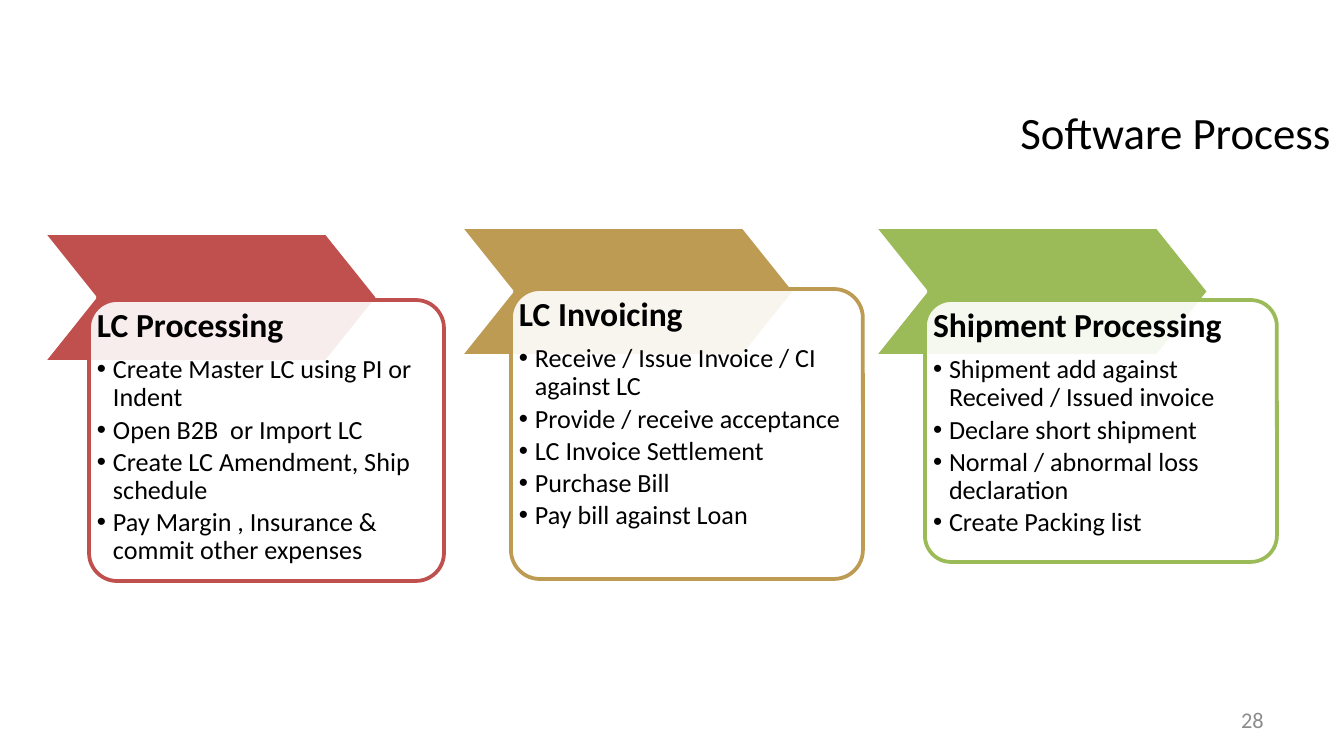
from lxml.etree import SubElement
from pptx import Presentation
from pptx.dml.color import RGBColor
from pptx.enum.shapes import MSO_SHAPE as Shape
from pptx.enum.text import MSO_ANCHOR as Anchor, MSO_AUTO_SIZE as AutoSize, PP_ALIGN as Align
from pptx.oxml.ns import qn
from pptx.util import Pt

PX = 914400 / 134.4
FONT = "Calibri"
COLORS = {
    "text": "000000",
    "number": "8C8C8C",
    "paper": "FFFFFF",
    "red": "C0504D",
    "gold": "BD9B53",
    "green": "9BBB59",
}
CHEVRON_SIZE = (335, 129)
CARD_INSET = 8
BULLET_INDENT = 16

STAGES = [
    ("red", (43, 233), (89, 300, 355, 281), "LC Processing", [
        "Create Master LC using PI or Indent",
        "Open B2B  or Import LC",
        "Create LC Amendment, Ship schedule",
        "Pay Margin , Insurance & commit other expenses",
    ]),
    ("gold", (460, 227), (511, 289, 352, 290), "LC Invoicing", [
        "Receive / Issue Invoice / CI against LC",
        "Provide / receive acceptance",
        "LC Invoice Settlement",
        "Purchase Bill",
        "Pay bill against Loan",
    ]),
    ("green", (874, 227), (925, 300, 352, 262), "Shipment Processing", [
        "Shipment add against Received / Issued invoice",
        "Declare short shipment",
        "Normal / abnormal loss declaration",
        "Create Packing list",
    ]),
]


def emu(pixels):
    return round(pixels * PX)


def color(name):
    return RGBColor.from_string(COLORS[name])


def place(shape, box):
    shape.left, shape.top, shape.width, shape.height = map(emu, box)


def style_runs(paragraph, size, color_name="text", bold=False):
    for run in paragraph.runs:
        run.font.name = FONT
        run.font.size = Pt(size)
        run.font.bold = bold
        run.font.color.rgb = color(color_name)


def fill_line(shape, box, text, size, color_name="text"):
    place(shape, box)
    frame = shape.text_frame
    frame.text = text
    frame.word_wrap = True
    frame.auto_size = AutoSize.NONE
    frame.vertical_anchor = Anchor.MIDDLE
    frame.paragraphs[0].alignment = Align.RIGHT
    style_runs(frame.paragraphs[0], size, color_name)


def add_outline(slide, kind, box, adjustment, fill, line):
    shape = slide.shapes.add_shape(kind, *map(emu, box))
    shape.adjustments[0] = adjustment
    shape.shadow.inherit = False
    shape.fill.solid()
    shape.fill.fore_color.rgb = color(fill)
    shape.line.color.rgb = color(line)
    shape.line.width = Pt(2)
    return shape


def set_bullet(paragraph, indent, character=None):
    properties = paragraph._p.get_or_add_pPr()
    properties.set("marL", str(emu(indent)))
    properties.set("indent", str(-emu(indent)))
    if character:
        SubElement(properties, qn("a:buFont"), typeface="Arial")
        SubElement(properties, qn("a:buChar"), char=character)
    else:
        SubElement(properties, qn("a:buNone"))


def fill_list(body, box, heading, items):
    place(body, box)
    frame = body.text_frame
    frame.text = "\n".join([heading, *items])
    frame.word_wrap = True
    frame.auto_size = AutoSize.NONE
    frame.vertical_anchor = Anchor.TOP
    frame.margin_left = frame.margin_right = 0
    frame.margin_top = frame.margin_bottom = 0
    for index, paragraph in enumerate(frame.paragraphs):
        is_heading = index == 0
        size = 18 if is_heading else 14
        paragraph.level = 0 if is_heading else 1
        if is_heading:
            set_bullet(paragraph, 0)
        else:
            set_bullet(paragraph, BULLET_INDENT, "•")
        paragraph.alignment = Align.LEFT
        paragraph.line_spacing = 0.9
        paragraph.space_before = Pt(0)
        paragraph.space_after = Pt(size * (0.35 if is_heading else 0.15))
        style_runs(paragraph, size, bold=is_heading)


def add_stage(slide, body, accent, corner, card_box, heading, items):
    add_outline(slide, Shape.CHEVRON, (*corner, *CHEVRON_SIZE), 0.4, accent, "paper")
    card = add_outline(slide, Shape.ROUNDED_RECTANGLE, card_box, 0.1, "paper", accent)
    fill = card._element.spPr.find(qn("a:solidFill"))
    SubElement(fill[0], qn("a:alpha"), val="90000")

    left, top, width, height = card_box
    text_box = (left + CARD_INSET, top + CARD_INSET,
                width - 2 * CARD_INSET, height - 2 * CARD_INSET)
    fill_list(body, text_box, heading, items)
    slide.shapes._spTree.append(body._element)


def main():
    presentation = Presentation()
    presentation.slide_width, presentation.slide_height = emu(1344), emu(756)
    slide = presentation.slides.add_slide(presentation.slide_layouts.get_by_name("Comparison"))
    bodies = list(slide.placeholders)[1:]

    fill_line(slide.shapes.title, (918, 98, 426, 67), "Software Process", 24)
    for body, stage in zip(bodies, STAGES):
        add_stage(slide, body, *stage)
    for spare in bodies[len(STAGES):]:
        spare._element.getparent().remove(spare._element)

    number = slide.shapes.add_textbox(0, 0, 0, 0)
    fill_line(number, (964, 700, 313, 40), "28", 12, "number")
    presentation.save("out.pptx")


if __name__ == "__main__":
    main()
